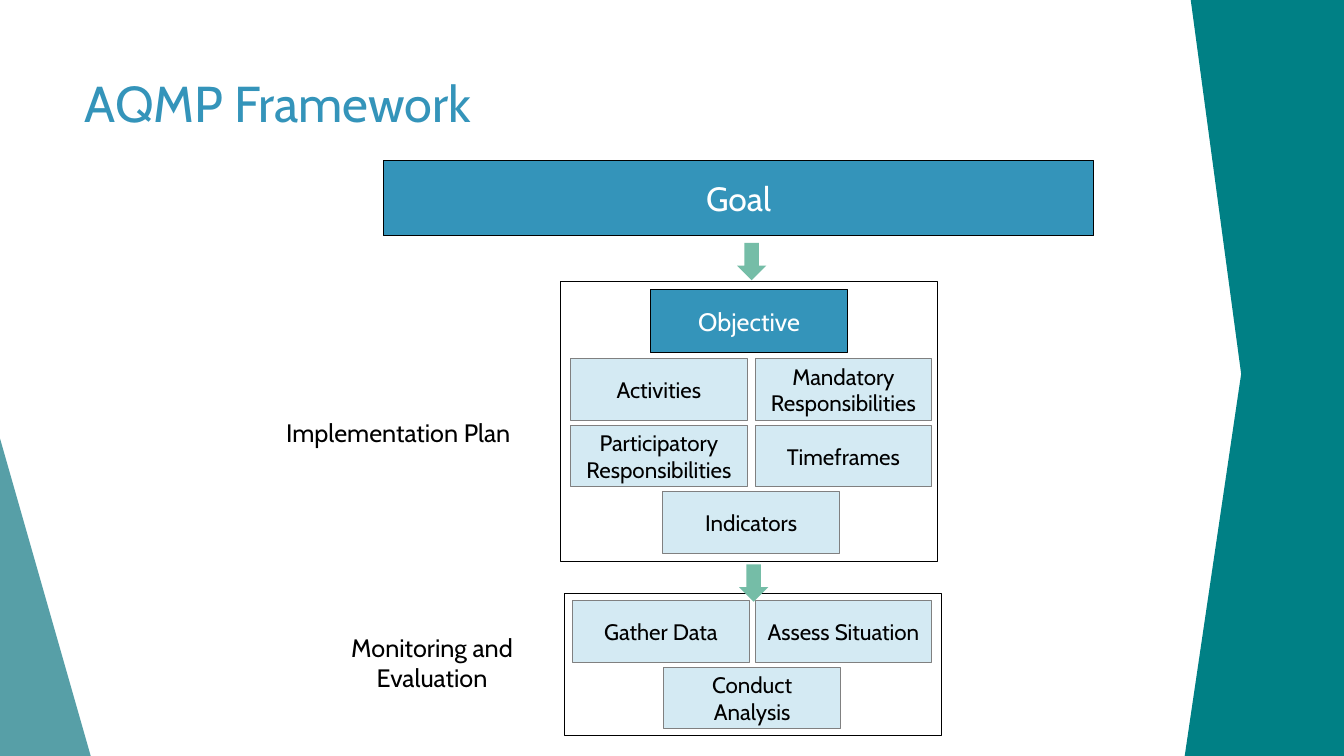
from dataclasses import dataclass
from typing import Optional

from lxml import etree
from pptx import Presentation
from pptx.dml.color import RGBColor
from pptx.enum.shapes import MSO_SHAPE as SHAPE
from pptx.enum.text import MSO_ANCHOR as ANCHOR, PP_ALIGN as ALIGN
from pptx.oxml.ns import qn
from pptx.util import Inches, Pt

FONT = "Cabin"
BLUE = RGBColor(0x34, 0x94, 0xBA)
PALE_BLUE = RGBColor(0xD4, 0xEA, 0xF3)
GREEN = RGBColor(0x75, 0xBD, 0xA7)
TEAL = RGBColor(0x00, 0x80, 0x85)
SOFT_TEAL = RGBColor(0x3A, 0x8F, 0x98)
GREY = RGBColor(0x80, 0x80, 0x80)
BLACK = RGBColor(0x00, 0x00, 0x00)
WHITE = RGBColor(0xFF, 0xFF, 0xFF)

STEP_WIDTH, STEP_HEIGHT, ROW_PITCH = 1.75, 0.61, 0.66


@dataclass(frozen=True)
class Box:
    left: float
    top: float
    width: float
    height: float
    fill: Optional[RGBColor] = None
    line: Optional[RGBColor] = None
    text: str = ""
    size: int = 16
    color: RGBColor = BLACK
    kind: SHAPE = SHAPE.RECTANGLE


@dataclass(frozen=True)
class Stage:
    left: float
    top: float
    column_pitch: float
    pairs: tuple[tuple[str, str], ...]
    last: str


@dataclass(frozen=True)
class Label:
    left: float
    top: float
    width: float
    height: float
    text: str


HEADINGS = [
    Box(3.8, 1.59, 7.05, 0.75, BLUE, BLACK, "Goal", 24, WHITE),
    Box(6.45, 2.87, 1.96, 0.63, BLUE, BLACK, "Objective", 18, WHITE),
]
LABELS = [
    Label(2.63, 4.09, 2.64, 0.4, "Implementation Plan"),
    Label(3.01, 6.22, 2.55, 0.71, "Monitoring and Evaluation"),
]
STAGES = [
    Stage(5.66, 3.56, 1.83,
          (("Activities", "Mandatory Responsibilities"),
           ("Participatory Responsibilities", "Timeframes")), "Indicators"),
    Stage(5.68, 5.96, 1.81, (("Gather Data", "Assess Situation"),), "Conduct Analysis"),
]
FRAMES = [
    Box(5.56, 2.79, 3.74, 2.78, line=BLACK),
    Box(5.6, 5.89, 3.74, 1.41, line=BLACK),
]
ARROWS = [
    Box(7.31, 2.41, 0.29, 0.37, GREEN, kind=SHAPE.DOWN_ARROW),
    Box(7.33, 5.6, 0.29, 0.37, GREEN, kind=SHAPE.DOWN_ARROW),
]
LEFT_WEDGE = Box(-0.02, 4.28, 0.92, 3.22, SOFT_TEAL, kind=SHAPE.RIGHT_TRIANGLE)
RIGHT_BAND = [(13.33, 0), (13.33, 7.5), (11.75, 7.5), (12.31, 3.71), (11.81, 0)]


def write(tf, text: str, size: int, color: RGBColor, align: ALIGN, anchor: ANCHOR) -> None:
    tf.text = text
    tf.word_wrap = True
    tf.vertical_anchor = anchor
    p = tf.paragraphs[0]
    p.alignment = align
    font = p.runs[0].font
    font.name, font.size = FONT, Pt(size)
    font.color.rgb = color


def paint(sp, fill: Optional[RGBColor], line: Optional[RGBColor]) -> None:
    sp.shadow.inherit = False
    if fill is None:
        sp.fill.background()
    else:
        sp.fill.solid()
        sp.fill.fore_color.rgb = fill
    if line is None:
        sp.line.fill.background()
    else:
        sp.line.color.rgb = line
        sp.line.width = Pt(0.75)


def draw_box(slide, box: Box):
    sp = slide.shapes.add_shape(box.kind, Inches(box.left), Inches(box.top),
                                Inches(box.width), Inches(box.height))
    paint(sp, box.fill, box.line)
    if box.text:
        write(sp.text_frame, box.text, box.size, box.color, ALIGN.CENTER, ANCHOR.MIDDLE)
    return sp


def draw_label(slide, label: Label) -> None:
    sp = slide.shapes.add_textbox(Inches(label.left), Inches(label.top),
                                  Inches(label.width), Inches(label.height))
    write(sp.text_frame, label.text, 18, BLACK, ALIGN.CENTER, ANCHOR.MIDDLE)


def draw_stage(slide, stage: Stage) -> None:
    places = [(row, column, text)
              for row, pair in enumerate(stage.pairs)
              for column, text in enumerate(pair)]
    places.append((len(stage.pairs), 0.5, stage.last))
    for row, column, text in places:
        draw_box(slide, Box(stage.left + column * stage.column_pitch,
                            stage.top + row * ROW_PITCH,
                            STEP_WIDTH, STEP_HEIGHT, PALE_BLUE, GREY, text))


def draw_background(slide) -> None:
    wedge = draw_box(slide, LEFT_WEDGE)
    color = wedge.fill._xPr.find(qn("a:solidFill"))[0]
    etree.SubElement(color, qn("a:alpha")).set("val", "85000")

    points = [(Inches(x), Inches(y)) for x, y in RIGHT_BAND]
    builder = slide.shapes.build_freeform(*points[0])
    builder.add_line_segments(points[1:], close=True)
    paint(builder.convert_to_shape(), TEAL, None)


def draw_title(slide) -> None:
    title = slide.shapes.title
    title.left, title.top = Inches(0.74), Inches(0.67)
    title.width, title.height = Inches(11.92), Inches(1.44)
    write(title.text_frame, "AQMP Framework", 36, BLUE, ALIGN.LEFT, ANCHOR.TOP)


def main() -> None:
    prs = Presentation()
    prs.slide_width, prs.slide_height = Inches(13.33), Inches(7.5)
    slide = prs.slides.add_slide(prs.slide_layouts[5])
    draw_background(slide)
    draw_title(slide)
    for label in LABELS:
        draw_label(slide, label)
    for heading in HEADINGS:
        draw_box(slide, heading)
    for stage in STAGES:
        draw_stage(slide, stage)
    for box in FRAMES + ARROWS:
        draw_box(slide, box)
    prs.save("out.pptx")


if __name__ == "__main__":
    main()
